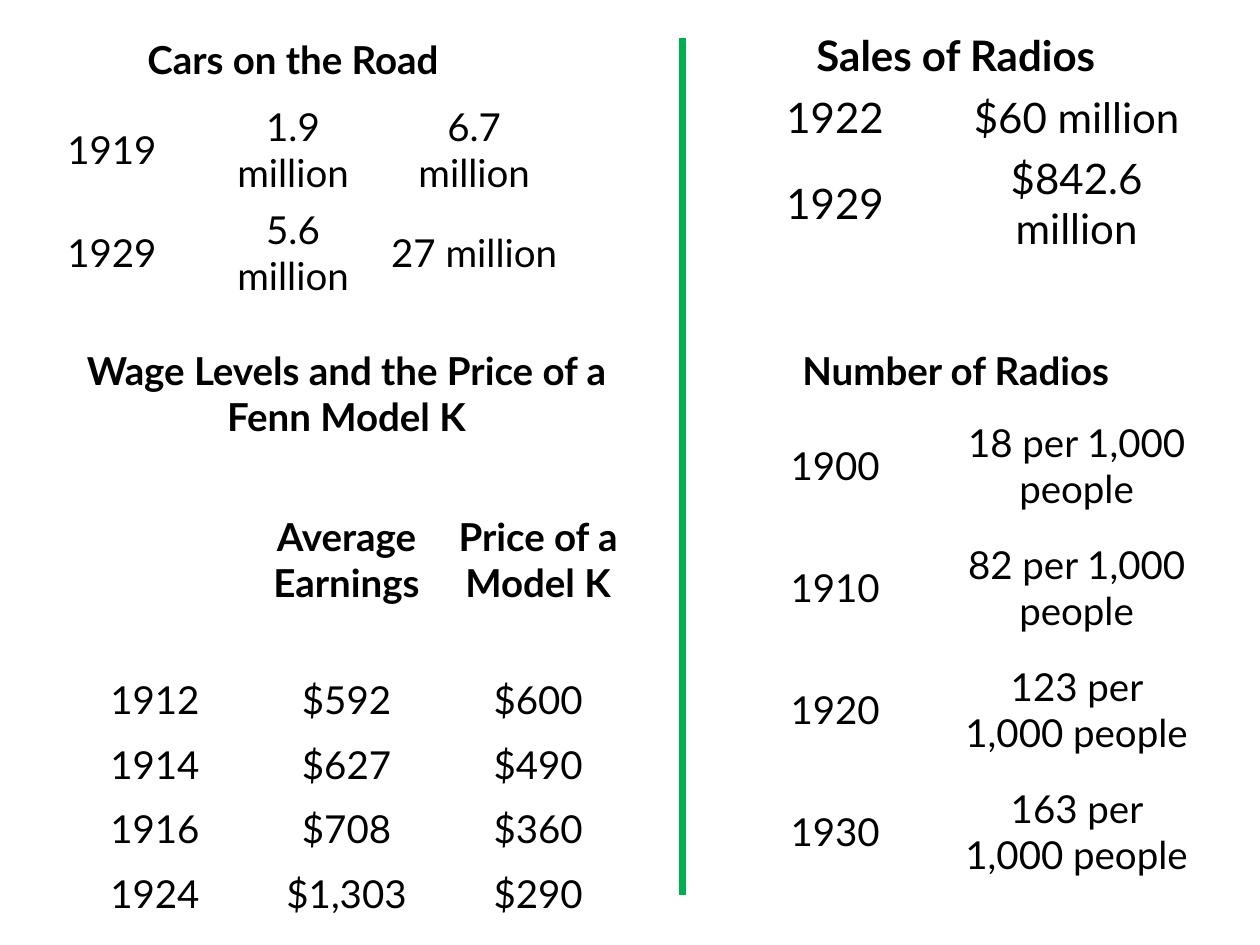
from dataclasses import dataclass

from lxml.etree import SubElement
from pptx import Presentation
from pptx.dml.color import RGBColor
from pptx.enum.shapes import MSO_CONNECTOR as Connector
from pptx.enum.text import MSO_ANCHOR as Anchor, PP_ALIGN as Align
from pptx.oxml.ns import qn
from pptx.slide import Slide
from pptx.table import _Cell as Cell
from pptx.util import Pt

BLACK = RGBColor(0x00, 0x00, 0x00)
GREEN = RGBColor(0x00, 0xB0, 0x50)
FONT = "Lato"
CELL_MARGIN = Pt(3)


@dataclass
class FactTable:
    title: str
    left: float
    top: float
    column_width: float
    height: float
    row_heights: list[float]
    rows: list[list[str]]
    font_size: float = 22
    bold_rows: int = 1


FACT_TABLES = [
    FactTable(
        "Cars on the Road", 12.2, 12.2, 103.5, 161.3, [44] * 3,
        [["1919", "1.9 million", "6.7 million"],
         ["1929", "5.6 million", "27 million"]],
    ),
    FactTable(
        "Number of Radios", 408.2, 192.2, 138, 318.2, [39] + [69.8] * 4,
        [["1900", "18 per 1,000 people"],
         ["1910", "82 per 1,000 people"],
         ["1920", "123 per 1,000 people"],
         ["1930", "163 per 1,000 people"]],
    ),
    FactTable(
        "Sales of Radios", 408.2, 14.4, 138, 133.2, [35, 35, 63.2],
        [["1922", "$60 million"],
         ["1929", "$842.6 million"]],
        font_size=24,
    ),
    FactTable(
        "Wage Levels and the Price of a Fenn Model K",
        33.8, 192.2, 109.5, 337, [65.5, 123.8] + [36.9] * 4,
        [["", "Average Earnings", "Price of a Model K"],
         ["1912", "$592", "$600"],
         ["1914", "$627", "$490"],
         ["1916", "$708", "$360"],
         ["1924", "$1,303", "$290"]],
        bold_rows=2,
    ),
]


def write_cell(cell: Cell, text: str, size: float, bold: bool) -> None:
    cell.vertical_anchor = Anchor.MIDDLE
    cell.margin_left = cell.margin_right = CELL_MARGIN
    cell.margin_top = cell.margin_bottom = CELL_MARGIN
    paragraph = cell.text_frame.paragraphs[0]
    paragraph.text = text
    paragraph.alignment = Align.CENTER
    for run in paragraph.runs:
        run.font.name = FONT
        run.font.size = Pt(size)
        run.font.bold = bold
        run.font.color.rgb = BLACK


def draw_table(slide: Slide, facts: FactTable) -> None:
    column_count = len(facts.rows[0])
    frame = slide.shapes.add_table(
        len(facts.row_heights), column_count, Pt(facts.left), Pt(facts.top),
        Pt(facts.column_width * column_count), Pt(facts.height),
    )
    table = frame.table
    table.first_row = False
    table.horz_banding = False
    for row, height in zip(table.rows, facts.row_heights):
        row.height = Pt(height)
    frame.height = Pt(facts.height)
    for cell in table.iter_cells():
        cell.fill.background()

    table.cell(0, 0).merge(table.cell(0, column_count - 1))
    write_cell(table.cell(0, 0), facts.title, facts.font_size, True)
    for row_index, texts in enumerate(facts.rows, start=1):
        for column_index, text in enumerate(texts):
            write_cell(table.cell(row_index, column_index), text,
                       facts.font_size, row_index < facts.bold_rows)


def draw_divider(slide: Slide, x: float, top: float, bottom: float) -> None:
    divider = slide.shapes.add_connector(
        Connector.STRAIGHT, Pt(x), Pt(top), Pt(x), Pt(bottom))
    divider.line.color.rgb = GREEN
    divider.line.width = Pt(4)
    SubElement(divider.line._get_or_add_ln().getparent(), qn("a:effectLst"))


def main() -> None:
    presentation = Presentation()
    presentation.slide_width = Pt(720)
    presentation.slide_height = Pt(540)
    slide = presentation.slides.add_slide(presentation.slide_layouts[6])
    for facts in FACT_TABLES:
        draw_table(slide, facts)
    draw_divider(slide, 390, 21.6, 511.2)
    presentation.save("out.pptx")


if __name__ == "__main__":
    main()
